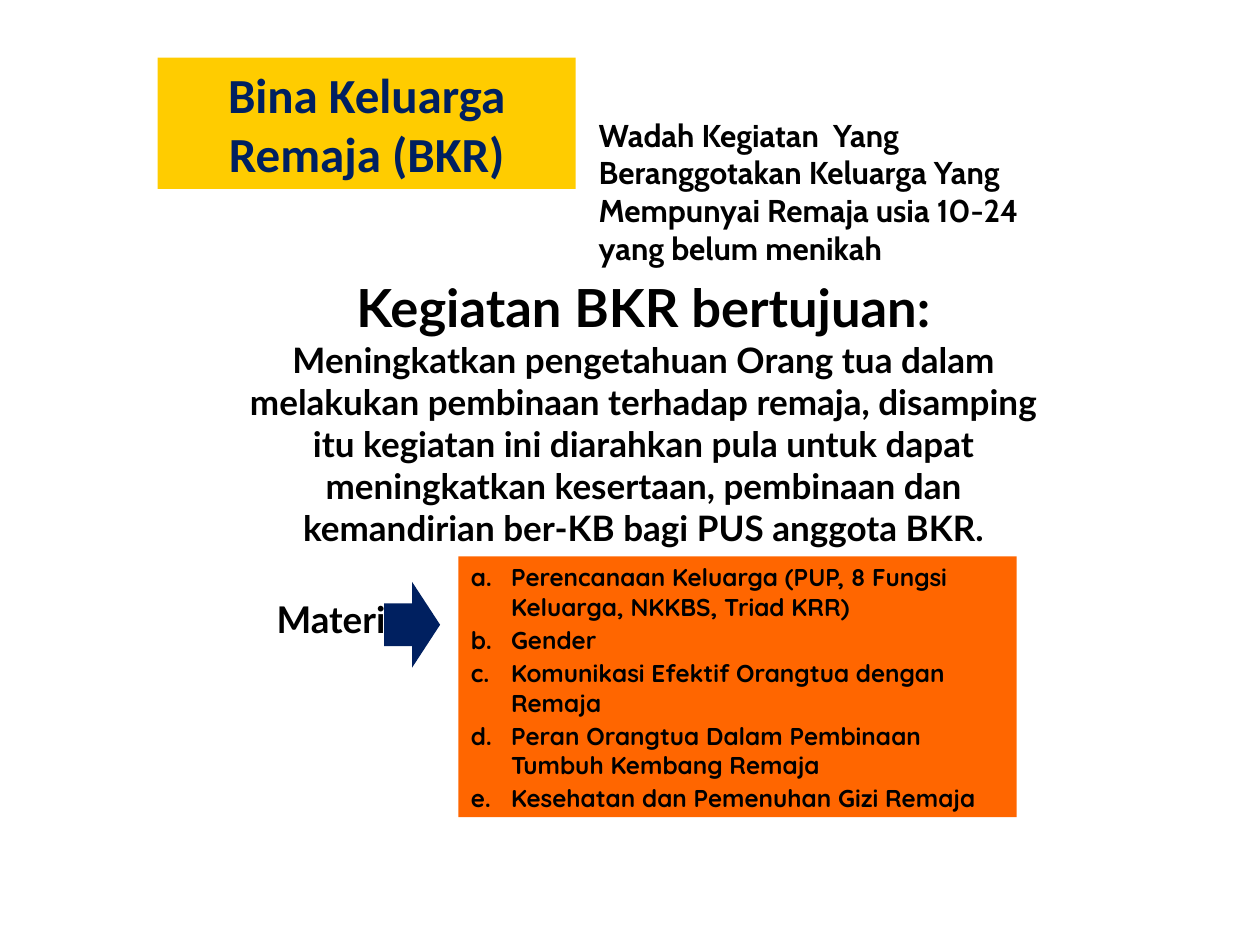
from lxml import etree
from pptx import Presentation
from pptx.dml.color import RGBColor
from pptx.enum import shapes, text
from pptx.oxml import ns
from pptx.util import Pt

COLORS = {"ink": "000000", "navy": "002060", "yellow": "FFCC00", "orange": "FF6600"}
TOPICS = [
    "Perencanaan Keluarga (PUP, 8 Fungsi Keluarga, NKKBS, Triad KRR)",
    "Gender",
    "Komunikasi Efektif Orangtua dengan Remaja",
    "Peran Orangtua Dalam Pembinaan Tumbuh Kembang Remaja",
    "Kesehatan dan Pemenuhan Gizi Remaja",
]
PURPOSE = (
    "Meningkatkan pengetahuan Orang tua dalam melakukan pembinaan terhadap remaja, "
    "disamping itu kegiatan ini diarahkan pula untuk dapat meningkatkan kesertaan, "
    "pembinaan dan kemandirian ber-KB bagi PUS anggota BKR."
)
DESCRIPTION = (
    "Wadah Kegiatan  Yang Beranggotakan Keluarga Yang Mempunyai Remaja "
    "usia 10-24 yang belum menikah"
)


def add_block(page, box, kind, fill):
    """Add a filled preset shape without outline or shadow."""
    block = page.shapes.add_shape(kind, *map(Pt, box))
    block.shadow.inherit = False
    block.fill.solid()
    block.fill.fore_color.rgb = RGBColor.from_string(COLORS[fill])
    block.line.fill.background()
    return block


def add_textbox(page, box, wrap=True):
    """Add a plain text box."""
    textbox = page.shapes.add_textbox(*map(Pt, box))
    textbox.text_frame.word_wrap = wrap
    return textbox


def write(holder, lines, font, sizes, color="ink", align=text.PP_ALIGN.LEFT):
    """Fill a shape with bold paragraphs, one size for each."""
    frame = holder.text_frame
    frame.text = "\n".join(lines)
    for para, size in zip(frame.paragraphs, sizes):
        para.alignment = align
        for span in para.runs:
            span.font.name = font
            span.font.size = Pt(size)
            span.font.bold = True
            span.font.color.rgb = RGBColor.from_string(COLORS[color])
    return frame


def add_header(page, left, top):
    """Place the yellow heading and the description beside it."""
    heading = add_block(page, (left, top, 239, 75), shapes.MSO_SHAPE.RECTANGLE, "yellow")
    write(heading, ["Bina Keluarga Remaja (BKR)"], "Calibri", [28], "navy",
          text.PP_ALIGN.CENTER)
    description = add_textbox(page, (left + 245, top + 29.5, 284, 94))
    write(description, [DESCRIPTION], "Cabin", [18])


def add_purpose(page, box):
    """Place the centred statement of purpose."""
    purpose = add_textbox(page, box)
    frame = write(purpose, ["Kegiatan BKR bertujuan:", PURPOSE], "Lato", [30, 20],
                  align=text.PP_ALIGN.CENTER)
    frame.vertical_anchor = text.MSO_ANCHOR.MIDDLE
    frame.margin_top = Pt(18)
    for para in frame.paragraphs:
        para._p.get_or_add_pPr().set("marL", str(Pt(21.6)))


def add_topics(page, left, top):
    """Place the label, the arrow and the lettered topics."""
    label = add_textbox(page, (left, top + 19.5, 86, 32), wrap=False)
    write(label, ["Materi"], "Lato", [21])
    add_block(page, (left + 68.5, top + 14.5, 32, 49),
              shapes.MSO_SHAPE.RIGHT_ARROW, "navy")
    panel = add_block(page, (left + 111, top, 319, 149), shapes.MSO_SHAPE.RECTANGLE,
                      "orange")
    frame = write(panel, TOPICS, "Quicksand", [13.9] * len(TOPICS))
    frame.vertical_anchor = text.MSO_ANCHOR.TOP
    for para in frame.paragraphs:
        para.space_after = Pt(2.4)
        props = para._p.get_or_add_pPr()
        props.set("marL", str(Pt(23)))
        props.set("indent", str(-Pt(23)))
        etree.SubElement(props, ns.qn("a:buFont"), typeface="+mj-lt")
        etree.SubElement(props, ns.qn("a:buAutoNum"), type="alphaLcPeriod")


def main():
    """Build the slide and save the deck."""
    deck = Presentation()
    deck.slide_width, deck.slide_height = Pt(720), Pt(540)
    page = deck.slides.add_slide(deck.slide_layouts[6])
    add_purpose(page, (102, 152, 510, 152))
    add_topics(page, 151, 318)
    add_header(page, 90, 33)
    deck.save("out.pptx")


if __name__ == "__main__":
    main()
